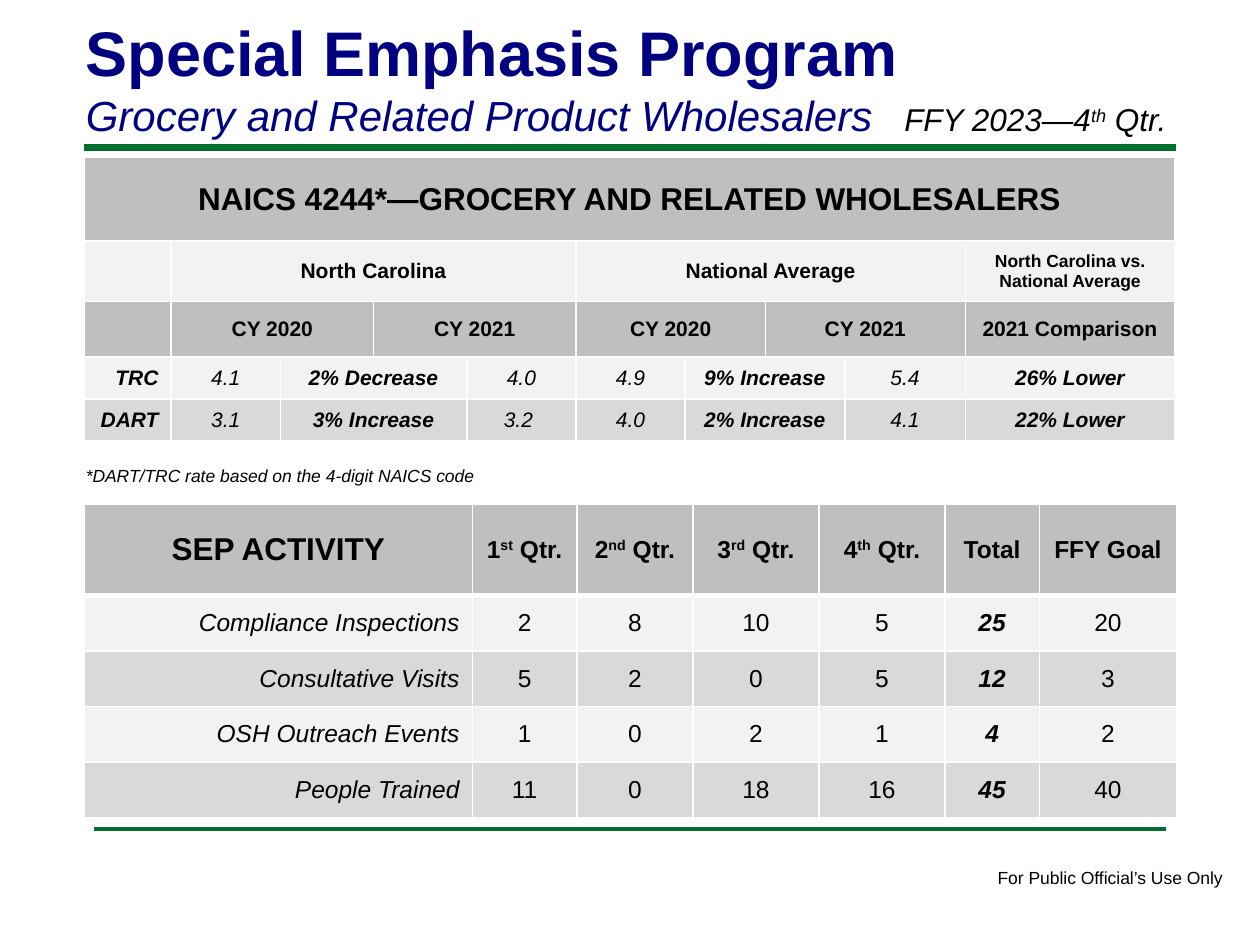
from lxml import etree
from pptx import Presentation
from pptx.dml.color import RGBColor
from pptx.enum.shapes import MSO_CONNECTOR
from pptx.enum.text import MSO_ANCHOR, PP_ALIGN
from pptx.oxml.ns import qn
from pptx.util import Cm, Pt

LEFT, CENTER, RIGHT = PP_ALIGN.LEFT, PP_ALIGN.CENTER, PP_ALIGN.RIGHT
MIDDLE = MSO_ANCHOR.MIDDLE
STRAIGHT = MSO_CONNECTOR.STRAIGHT
BLACK, NAVY, GREEN, WHITE = "000000", "000080", "007030", "FFFFFF"
HEADER_GRAY, LIGHT_GRAY, MID_GRAY = "BFBFBF", "F2F2F2", "D9D9D9"


def color(hex_code):
    return RGBColor.from_string(hex_code)


def write(paragraph, text, size, bold=False, italic=False, hex_code=BLACK, align=LEFT):
    """Write one paragraph; text between carets is raised."""
    parts = text.split("^")
    paragraph.text = parts[0]
    for part in parts[1:]:
        paragraph.add_run().text = part
    paragraph.alignment = align
    for index, run in enumerate(paragraph.runs):
        run.font.name = "Arial"
        run.font.size = Pt(size)
        run.font.bold = bold
        run.font.italic = italic
        run.font.color.rgb = color(hex_code)
        if index % 2:
            run._r.get_or_add_rPr().set("baseline", "30000")


presentation = Presentation()
presentation.slide_width = Cm(25.4)
presentation.slide_height = Cm(19.05)
slide = presentation.slides.add_slide(presentation.slide_layouts[6])

# Green rules: left, right, y, weight
for left, right, y, weight in [(1.7, 23.7, 2.97, 4), (1.9, 23.5, 16.71, 2)]:
    rule = slide.shapes.add_connector(STRAIGHT, Cm(left), Cm(y), Cm(right), Cm(y))
    rule.line.color.rgb = color(GREEN)
    rule.line.width = Pt(weight)
    etree.SubElement(rule._element.spPr, qn("a:effectLst"))

# Text boxes: left, top, width, height, wrap, lines of (text, size, bold, italic, colour)
text_boxes = [
    (19.86, 17.35, 5.11, 0.69, False,
     [("For Public Official’s Use Only", 10, False, False, BLACK)]),
    (1.48, 0.15, 20.96, 2.82, True,
     [("Special Emphasis Program", 36, True, False, NAVY),
      ("Grocery and Related Product Wholesalers", 24, False, True, NAVY)]),
    (1.48, 9.25, 8.56, 0.69, True,
     [("*DART/TRC rate based on the 4-digit NAICS code", 10, False, True, BLACK)]),
    (17.98, 1.9, 6.35, 1.02, True,
     [("FFY 2023—4^th^ Qtr.", 18, False, True, BLACK)]),
]
for left, top, width, height, wrap, lines in text_boxes:
    text_frame = slide.shapes.add_textbox(
        Cm(left), Cm(top), Cm(width), Cm(height)).text_frame
    text_frame.word_wrap = wrap
    for index, line in enumerate(lines):
        paragraph = text_frame.add_paragraph() if index else text_frame.paragraphs[0]
        write(paragraph, *line)

# Rate table: None continues the cell to its left
rate_rows = [
    ["NAICS 4244*—GROCERY AND RELATED WHOLESALERS"] + [None] * 9,
    ["", "North Carolina", None, None, None, "National Average", None, None, None,
     "North Carolina vs. National Average"],
    ["", "CY 2020", None, "CY 2021", None, "CY 2020", None, "CY 2021", None,
     "2021 Comparison"],
    ["TRC", "4.1", "2% Decrease", None, "4.0", "4.9", "9% Increase", None, "5.4",
     "26% Lower"],
    ["DART", "3.1", "3% Increase", None, "3.2 ", "4.0", "2% Increase", None, "4.1",
     "22% Lower"],
]
activity_rows = [
    ["SEP ACTIVITY", "1^st^ Qtr.", "2^nd^ Qtr.", "3^rd^ Qtr.", "4^th^ Qtr.", "Total",
     "FFY Goal"],
    ["Compliance Inspections", "2", "8", "10", "5", "25", "20"],
    ["Consultative Visits", "5", "2", "0", "5", "12", "3"],
    ["OSH Outreach Events", "1", "0", "2", "1", "4", "2"],
    ["People Trained", "11", "0", "18", "16", "45", "40"],
]

# Tables: top, rows, widths, heights, fills, header rows, body size,
# bold body columns, italic body columns, line weight under the first row
tables = [
    (10.16, activity_rows, [7.82, 2.11, 2.34, 2.54, 2.54, 1.9, 2.77],
     [1.84] + [1.12] * 4,
     [HEADER_GRAY, LIGHT_GRAY, MID_GRAY, LIGHT_GRAY, MID_GRAY],
     1, 14, [5], [0, 5], 3),
    (3.18, rate_rows, [1.75, 2.2, 1.88, 1.88, 2.2, 2.2, 1.62, 1.6, 2.43, 4.22],
     [1.68, 1.22, 1.12, 0.84, 0.84],
     [HEADER_GRAY, LIGHT_GRAY, HEADER_GRAY, LIGHT_GRAY, MID_GRAY],
     3, 12, [0, 2, 6, 9], range(10), 1),
]
for (top, rows, widths, heights, fills, header_rows, body_size,
     bold_columns, italic_columns, first_rule) in tables:
    table = slide.shapes.add_table(
        len(rows), len(widths), Cm(1.7), Cm(top),
        Cm(sum(widths)), Cm(sum(heights))).table
    for column, width in zip(table.columns, widths):
        column.width = Cm(width)
    for row, height in zip(table.rows, heights):
        row.height = Cm(height)

    for row_index, row in enumerate(rows):
        is_header = row_index < header_rows
        for column_index, text in enumerate(row):
            cell = table.cell(row_index, column_index)

            # White borders, then the fill
            properties = cell._tc.get_or_add_tcPr()
            for side in ("lnL", "lnR", "lnT", "lnB"):
                is_first_rule = (row_index, side) in [(0, "lnB"), (1, "lnT")]
                border = etree.SubElement(properties, qn("a:" + side))
                border.set("w", str(Pt(first_rule if is_first_rule else 1)))
                border_fill = etree.SubElement(border, qn("a:solidFill"))
                etree.SubElement(border_fill, qn("a:srgbClr")).set("val", WHITE)
            cell.fill.solid()
            cell.fill.fore_color.rgb = color(fills[row_index])
            cell.vertical_anchor = MIDDLE
            if not text:
                continue

            # Merge over the continued cells
            last = column_index
            while last + 1 < len(row) and row[last + 1] is None:
                last += 1
            if last > column_index:
                cell.merge(table.cell(row_index, last))

            size = body_size
            if row_index == column_index == 0:
                size = 18
            elif text.startswith("North Carolina vs."):
                size = 10
            write(cell.text_frame.paragraphs[0], text, size,
                  bold=is_header or column_index in bold_columns,
                  italic=not is_header and column_index in italic_columns,
                  align=RIGHT if column_index == 0 and not is_header else CENTER)

presentation.save("out.pptx")
